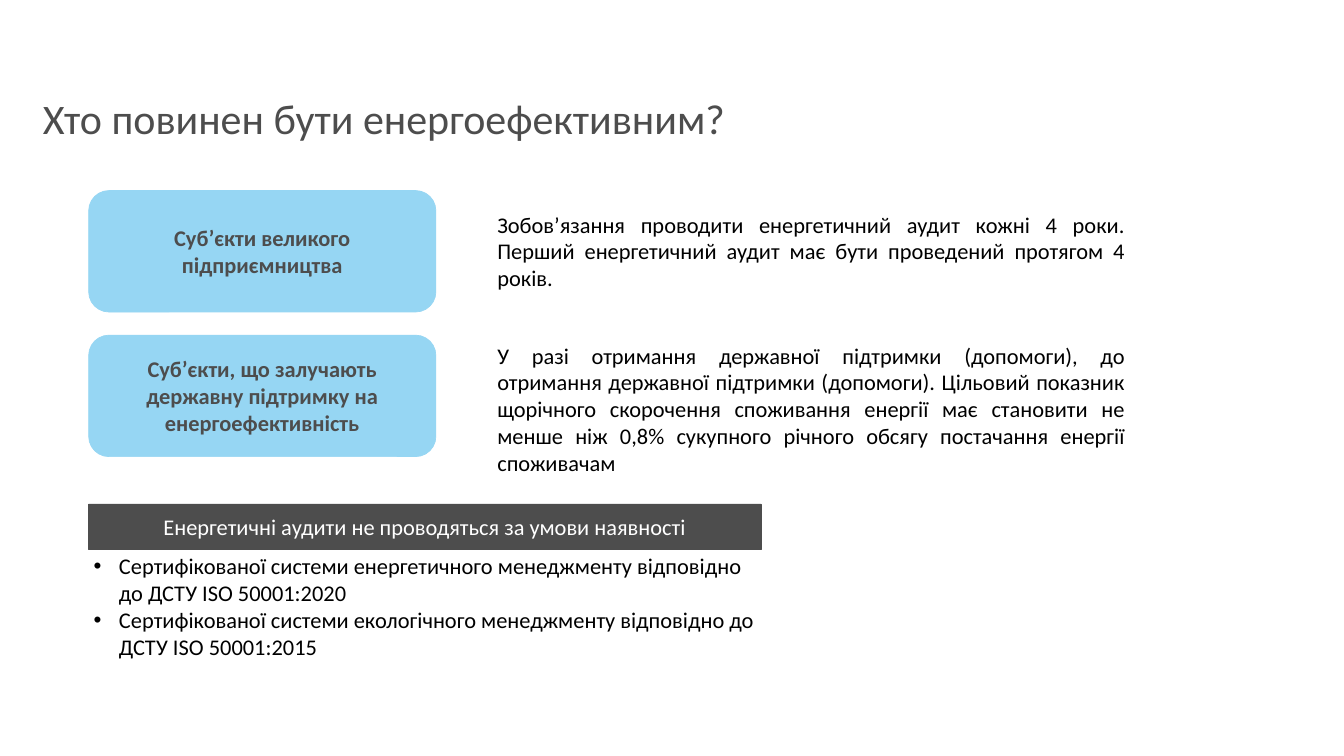
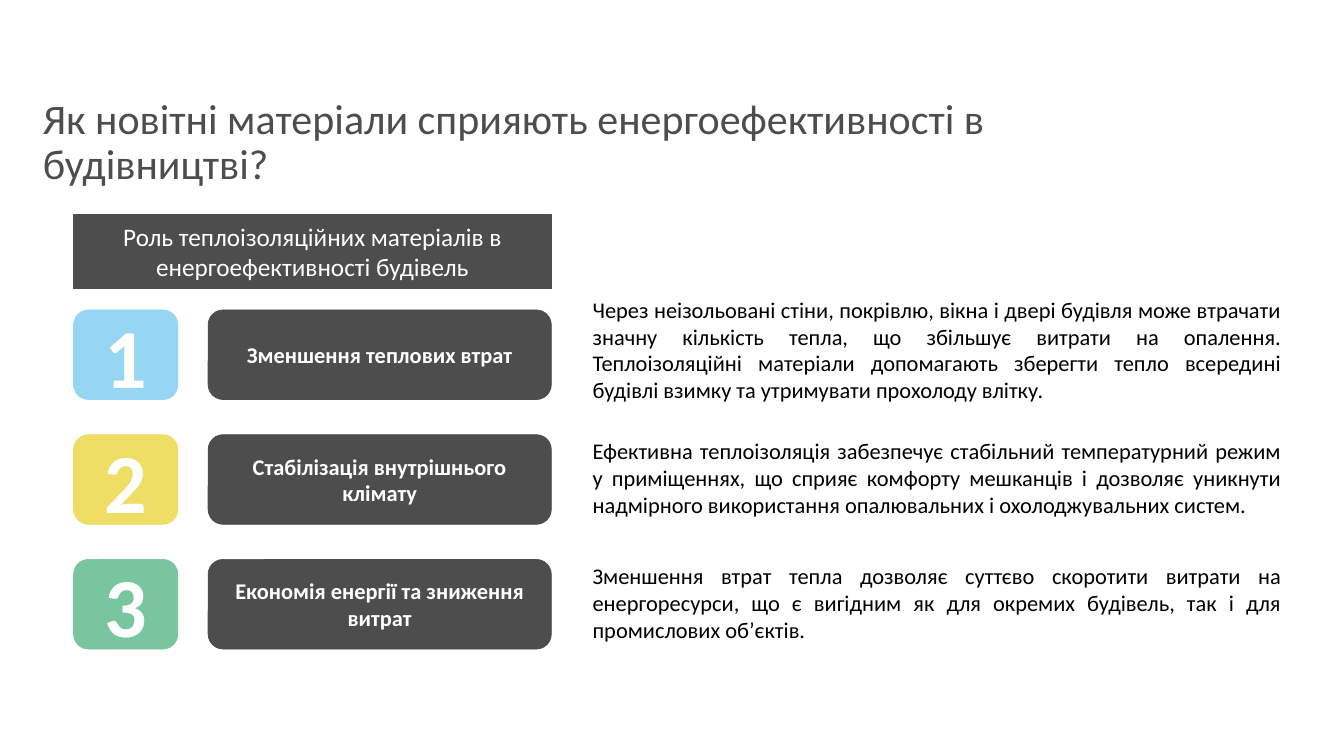
from lxml import etree
from pptx import Presentation
from pptx.dml.color import RGBColor
from pptx.enum import shapes, text
from pptx.oxml.ns import qn
from pptx.util import Pt

FONT = "Calibri"
COLORS = {
    "dark": "4D4D4D",
    "blue": "96D6F3",
    "yellow": "EEDE66",
    "green": "79C59F",
    "white": "FFFFFF",
    "black": "000000",
}
RECT = shapes.MSO_SHAPE.RECTANGLE
ROUND = shapes.MSO_SHAPE.ROUNDED_RECTANGLE
ALIGN = text.PP_ALIGN
ANCHOR = text.MSO_ANCHOR
TITLE_LEFT, TITLE_TOP, TITLE_HEIGHT = 54, 136.8, 64.8
LINE, PADDING = 38.9, 7.2

DUTIES = [
    ("Суб’єкти великого підприємництва",
     "Зобов’язання проводити енергетичний аудит кожні 4 роки. Перший енергетичний "
     "аудит має бути проведений протягом 4 років.", 25.2, 3),
    ("Суб’єкти, що залучають державну підтримку на енергоефективність",
     "У разі отримання державної підтримки (допомоги), до отримання державної "
     "підтримки (допомоги). Цільовий показник щорічного скорочення споживання "
     "енергії має становити не менше ніж 0,8% сукупного річного обсягу постачання "
     "енергії споживачам", 5.8, 4),
]
EXEMPTIONS = [
    "Сертифікованої системи енергетичного менеджменту відповідно до ДСТУ ISO 50001:2020",
    "Сертифікованої системи екологічного менеджменту відповідно до ДСТУ ISO 50001:2015",
]
BENEFITS = [
    ("blue", "Зменшення теплових втрат",
     "Через неізольовані стіни, покрівлю, вікна і двері будівля може втрачати значну "
     "кількість тепла, що збільшує витрати на опалення. Теплоізоляційні матеріали "
     "допомагають зберегти тепло всередині будівлі взимку та утримувати прохолоду "
     "влітку.", -23.8, 4),
    ("yellow", "Стабілізація внутрішнього клімату",
     "Ефективна теплоізоляція забезпечує стабільний температурний режим у приміщеннях, "
     "що сприяє комфорту мешканців і дозволяє уникнути надмірного використання "
     "опалювальних і охолоджувальних систем.", 0, 3),
    ("green", "Економія енергії та зниження витрат",
     "Зменшення втрат тепла дозволяє суттєво скоротити витрати на енергоресурси, що є "
     "вигідним як для окремих будівель, так і для промислових об’єктів.", 0, 3),
]


def rgb(name):
    """Return the named colour."""
    return RGBColor.from_string(COLORS[name])


def write(sp, *lines, size=32, color="black", bold=False, align=ALIGN.LEFT,
          anchor=ANCHOR.TOP, spacing=1.0, bullet=None,
          auto_size=text.MSO_AUTO_SIZE.NONE):
    """Fill a shape with one formatted paragraph per line."""
    tf = sp.text_frame
    tf.word_wrap = True
    tf.auto_size = auto_size
    tf.vertical_anchor = anchor
    for i, line in enumerate(lines):
        p = tf.paragraphs[0] if i == 0 else tf.add_paragraph()
        p.alignment = align
        p.line_spacing = spacing
        p.space_before = Pt(0)
        if bullet:
            pPr = p._p.get_or_add_pPr()
            pPr.set("marL", str(Pt(36)))
            pPr.set("indent", str(-Pt(36)))
            etree.SubElement(pPr, qn("a:buChar"), char=bullet)
        r = p.add_run()
        r.text = line
        r.font.name = FONT
        r.font.size = Pt(size)
        r.font.bold = bold
        r.font.color.rgb = rgb(color)


def place(sp, x, y, w, h):
    """Move and size a shape in points."""
    sp.left, sp.top, sp.width, sp.height = Pt(x), Pt(y), Pt(w), Pt(h)


def add_title(s, title, width):
    """Set the slide title."""
    place(s.shapes.title, TITLE_LEFT, TITLE_TOP, width, TITLE_HEIGHT)
    write(s.shapes.title, title, size=60, color="dark", spacing=0.9)


def add_box(s, kind, label, box, fill="dark", color="white", **fmt):
    """Add a filled shape with a centred label."""
    sp = s.shapes.add_shape(kind, *map(Pt, box))
    sp.shadow.inherit = False
    sp.fill.solid()
    sp.fill.fore_color.rgb = rgb(fill)
    sp.line.color.rgb = rgb(fill)
    sp.line.width = Pt(1)
    write(sp, label, color=color, align=ALIGN.CENTER, anchor=ANCHOR.MIDDLE, **fmt)


def add_note(s, note, x, y, w, lines):
    """Add a justified explanation sized for a number of lines."""
    sp = s.shapes.add_textbox(Pt(x), Pt(y), Pt(w), Pt(PADDING + LINE * lines))
    write(sp, note, align=ALIGN.JUSTIFY,
          auto_size=text.MSO_AUTO_SIZE.SHAPE_TO_FIT_TEXT)


def add_duties(s, x, y, w, pitch):
    """Add the rows of obliged entities and their duties."""
    label_w, label_h, note_x = 496, 173.5, 576.7
    for i, (label, note, shift, lines) in enumerate(DUTIES):
        top = y + i * pitch
        add_box(s, ROUND, label, (x, top, label_w, label_h),
                fill="blue", color="dark", bold=True)
        add_note(s, note, x + note_x, top + shift, w - note_x, lines)


def add_exemptions(s, x, y, w, h):
    """Add the exemption banner with its bulleted list."""
    banner_h = 64.8
    body = s.placeholders[1]
    place(body, x, y + banner_h + 0.7, w, h - banner_h)
    write(body, *EXEMPTIONS, bullet="•")
    add_box(s, RECT, "Енергетичні аудити не проводяться за умови наявності",
            (x, y, w, banner_h))


def add_benefits(s, x, y, w, pitch):
    """Add the numbered rows of benefits."""
    row_h, number_w, label_x, label_w, note_x = 128, 149, 192.2, 490.3, 734.4
    for i, (fill, label, note, shift, lines) in enumerate(BENEFITS):
        top = y + i * pitch
        add_box(s, ROUND, str(i + 1), (x, top, number_w, row_h),
                fill=fill, size=120, bold=True)
        add_box(s, ROUND, label, (x + label_x, top, label_w, row_h), bold=True)
        add_note(s, note, x + note_x, top + shift, w - note_x, lines)


def audit_slide(prs):
    """Build the slide on who must be energy efficient."""
    s = prs.slides.add_slide(prs.slide_layouts[1])
    add_title(s, "Хто повинен бути енергоефективним?", 1320.5)
    add_duties(s, 126.7, 272.2, 1488.2, 206.6)
    add_exemptions(s, 126.7, 720, 960.5, 227.5)


def materials_slide(prs):
    """Build the slide on insulation materials."""
    s = prs.slides.add_slide(prs.slide_layouts[5])
    add_title(s, "Як новітні матеріали сприяють енергоефективності в будівництві?", 1522)
    add_box(s, RECT, "Роль теплоізоляційних матеріалів в енергоефективності будівель",
            (105.1, 306.7, 682.5, 105.8), size=36)
    add_benefits(s, 105.1, 442.8, 1733, 178.2)


def main():
    """Build and save the presentation."""
    prs = Presentation()
    prs.slide_width, prs.slide_height = Pt(1920), Pt(1080)
    audit_slide(prs)
    materials_slide(prs)
    prs.save("out.pptx")


if __name__ == "__main__":
    main()
